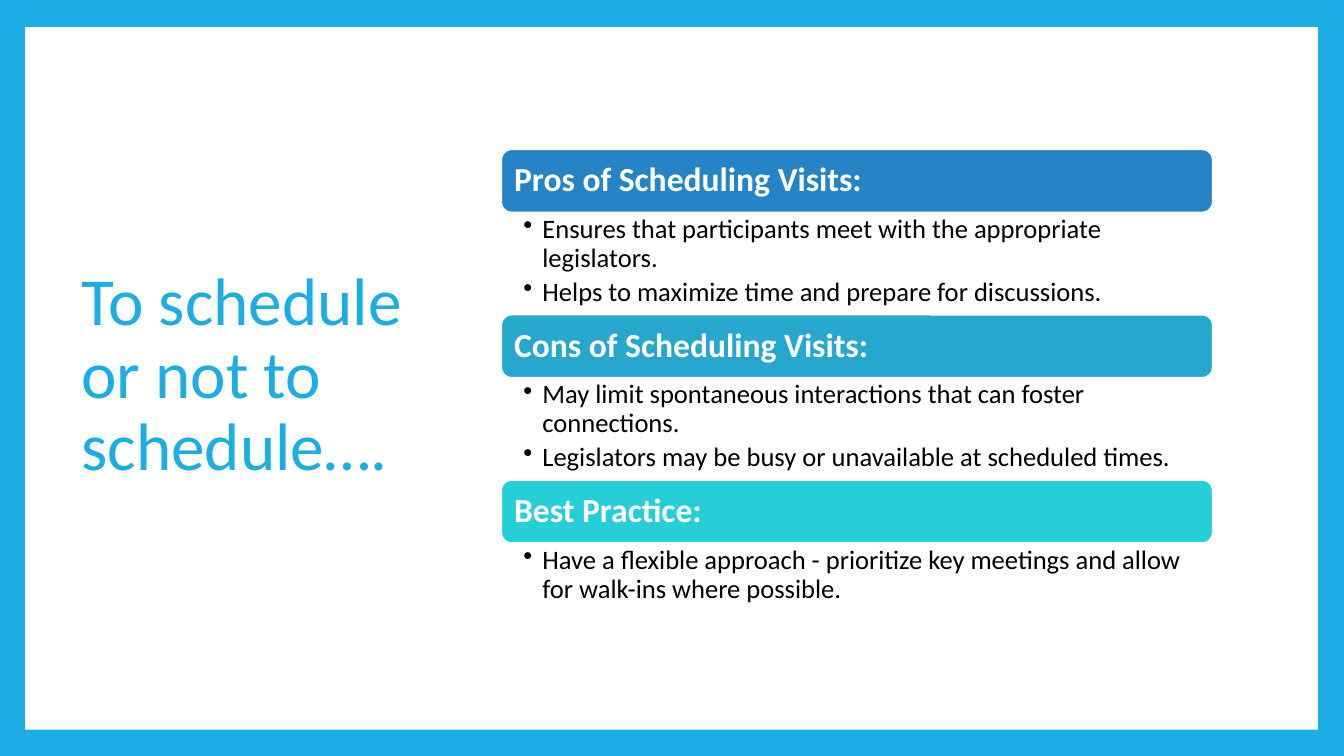
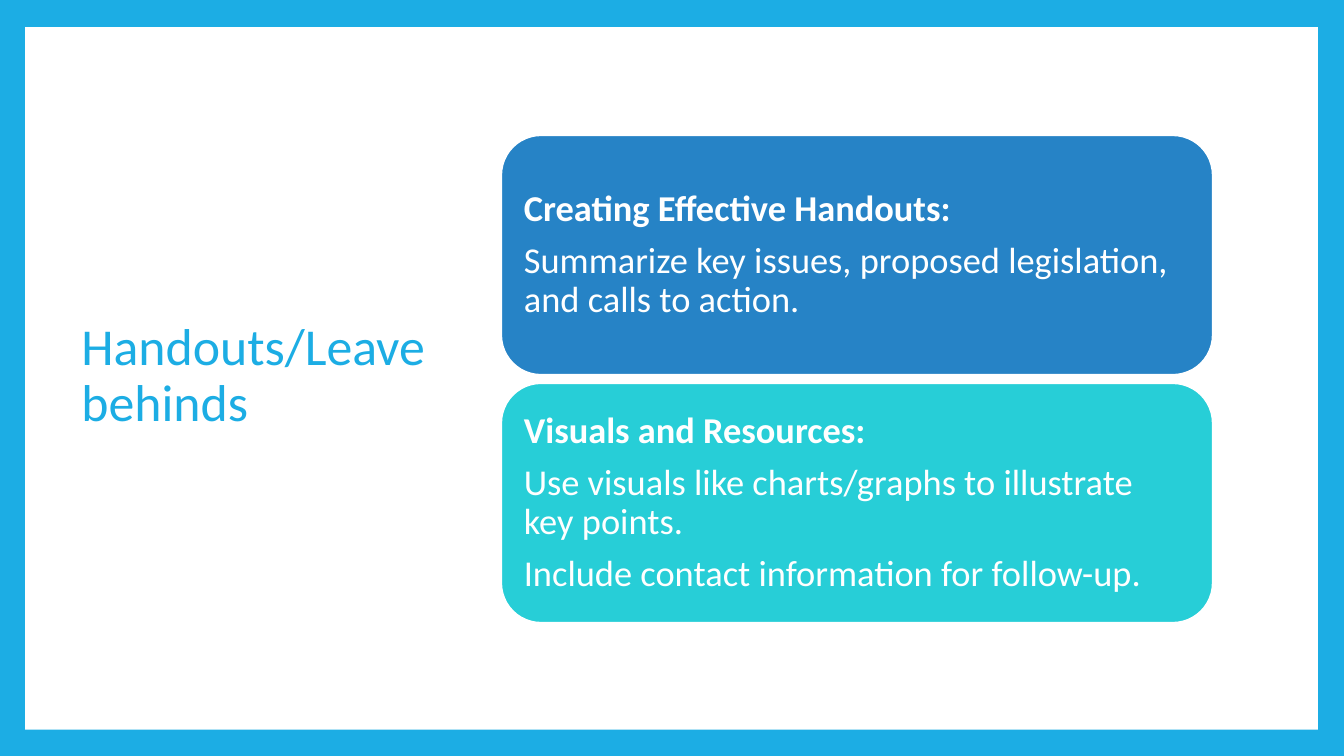
"""Build two slides on scheduling legislative visits and preparing handouts."""
import pptx
import pptx.util
import pptx.dml.color
import pptx.enum.shapes
import pptx.enum.text
import pptx.oxml.ns
from lxml import etree

Inches, Pt = pptx.util.Inches, pptx.util.Pt
SHAPE = pptx.enum.shapes.MSO_SHAPE
ANCHOR = pptx.enum.text.MSO_ANCHOR

COLORS = {"sky": "1CADE4", "white": "FFFFFF", "black": "000000",
          "blue": "2683C6", "cyan": "27A7CE", "turquoise": "27CED7"}
FONT = "Calibri"
LEFT, WIDTH = 4.97, 7.06

SCHEDULE_TITLE = "To schedule or not to schedule…."
SCHEDULE = [
    ("Pros of Scheduling Visits:", "blue", 1.01, [
        "Ensures that participants meet with the appropriate legislators.",
        "Helps to maximize time and prepare for discussions."]),
    ("Cons of Scheduling Visits:", "cyan", 1.01, [
        "May limit spontaneous interactions that can foster connections.",
        "Legislators may be busy or unavailable at scheduled times."]),
    ("Best Practice:", "turquoise", 0.65, [
        "Have a flexible approach - prioritize key meetings and allow for walk-ins where possible."]),
]
HANDOUTS_TITLE = "Handouts/Leave behinds"
HANDOUTS = [
    ("Creating Effective Handouts:", "blue", [
        "Summarize key issues, proposed legislation, and calls to action."]),
    ("Visuals and Resources:", "turquoise", [
        "Use visuals like charts/graphs to illustrate key points.",
        "Include contact information for follow-up."]),
]


def rgb(name):
    return pptx.dml.color.RGBColor.from_string(COLORS[name])


def add_bullet(p, indent=0.19):
    pPr = p._p.get_or_add_pPr()
    pPr.set("marL", str(Inches(indent)))
    pPr.set("indent", str(-Inches(indent)))
    etree.SubElement(pPr, pptx.oxml.ns.qn("a:buChar"), char="•")


def write(sp, lines, size, color="white", bold_first=False, bullet=False,
          after=0, insets=(0.1, 0.05, 0.1, 0.05), anchor=ANCHOR.MIDDLE):
    tf = sp.text_frame
    tf.word_wrap = True
    tf.vertical_anchor = anchor
    tf.margin_left, tf.margin_top, tf.margin_right, tf.margin_bottom = map(Inches, insets)
    for i, line in enumerate(lines):
        p = tf.paragraphs[0] if i == 0 else tf.add_paragraph()
        p.alignment = pptx.enum.text.PP_ALIGN.LEFT
        p.line_spacing = 0.9
        p.space_after = Pt(round(size * after, 1))
        if bullet:
            add_bullet(p)
        r = p.add_run()
        r.text = line
        r.font.name, r.font.size = FONT, Pt(size)
        r.font.bold = bold_first and i == 0
        r.font.color.rgb = rgb(color)


def add_box(s, kind, fill, *box, line=None):
    sp = s.shapes.add_shape(kind, *map(Inches, box))
    sp.shadow.inherit = False
    sp.fill.solid()
    sp.fill.fore_color.rgb = rgb(fill)
    if line:
        sp.line.color.rgb = rgb(line)
        sp.line.width = Pt(1.5)
    else:
        sp.line.fill.background()
    return sp


def add_text(s, box, lines, size, **fmt):
    write(s.shapes.add_textbox(*map(Inches, box)), lines, size, **fmt)


def add_card(s, fill, top, height, lines, size, inset):
    sp = add_box(s, SHAPE.ROUNDED_RECTANGLE, fill, LEFT, top, WIDTH, height, line="white")
    write(sp, lines, size, bold_first=True, after=0.35, insets=(inset,) * 4)


def new_slide(prs, title, size):
    s = prs.slides.add_slide(prs.slide_layouts[6])
    add_box(s, SHAPE.RECTANGLE, "white", 0.25, 0.27, 12.82, 6.97)
    add_text(s, (0.71, 0.67, 3.68, 6.13), [title], size, color="sky")
    return s


def schedule_slide(prs):
    s = new_slide(prs, SCHEDULE_TITLE, 48)
    top, bar = 1.48, 0.63
    for heading, fill, height, points in SCHEDULE:
        add_card(s, fill, top, bar, [heading], 24, 0.1)
        add_text(s, (LEFT, top + bar, WIDTH, height), points, 19, color="black",
                 bullet=True, after=0.2, insets=(0.22, 0.03, 0.19, 0.03), anchor=ANCHOR.TOP)
        top += bar + height


def handouts_slide(prs):
    s = new_slide(prs, HANDOUTS_TITLE, 37)
    top, height, gap = 1.34, 2.38, 0.08
    for i, (heading, fill, lines) in enumerate(HANDOUTS):
        add_card(s, fill, top + i * (height + gap), height, [heading, *lines], 26, 0.11)


def main():
    prs = pptx.Presentation()
    prs.slide_width, prs.slide_height = Inches(13.33), Inches(7.5)
    background = prs.slide_master.background.fill
    background.solid()
    background.fore_color.rgb = rgb("sky")
    schedule_slide(prs)
    handouts_slide(prs)
    prs.save("out.pptx")


if __name__ == "__main__":
    main()
